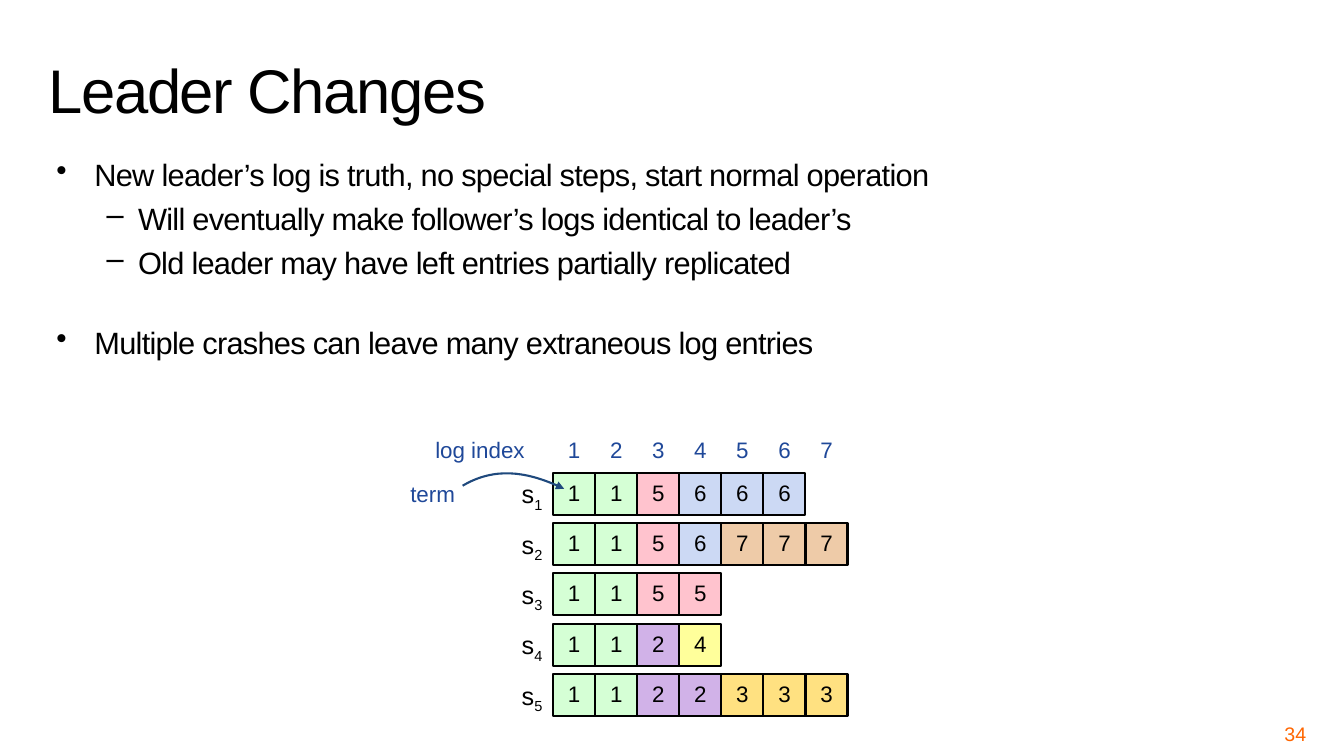
from lxml import etree
from pptx import Presentation
from pptx import util as u
from pptx.dml import color
from pptx.enum import shapes, text
from pptx.oxml import ns

FONT = "Arial"
BLACK, BLUE, ORANGE = "000000", "1F4899", "FF6600"
CURVE_COLOR = "1F497D"
TERM_COLORS = {1: "D5FFD5", 2: "D1B2E8", 3: "FFE181", 4: "FFFF9B",
               5: "FFC3CE", 6: "CCD9F4", 7: "EECBA8"}

# Terms stored in the log of each server
LOGS = [
    [1, 1, 5, 6, 6, 6],
    [1, 1, 5, 6, 7, 7, 7],
    [1, 1, 5, 5],
    [1, 1, 2, 4],
    [1, 1, 2, 2, 3, 3, 3],
]

# Level, space before in points, wording
BULLETS = [
    (0, 6, "New leader’s log is truth, no special steps, start normal operation"),
    (1, 4.4, "Will eventually make follower’s logs identical to leader’s"),
    (1, 4.4, "Old leader may have left entries partially replicated"),
    (0, 30, "Multiple crashes can leave many extraneous log entries"),
]
# Bullet sign, left margin and hanging indent of each level
LEVELS = [("•", 0.96, -0.96), ("–", 2.06, -0.79)]

# Log grid, in centimetres
GRID_LEFT, GRID_TOP = 13.94, 11.91
CELL, ROW_PITCH = 1.06, 1.27


def rgb(value):
    return color.RGBColor.from_string(value)


def apply(target, values):
    for name, value in values.items():
        setattr(target, name, value)


def set_margins(frame, horizontal, vertical):
    apply(frame, {
        "margin_left": u.Cm(horizontal), "margin_right": u.Cm(horizontal),
        "margin_top": u.Cm(vertical), "margin_bottom": u.Cm(vertical),
    })


def add_span(para, wording, size, ink, **run_format):
    """Add a run; run_format holds extra attributes such as spc or baseline."""
    span = para.add_run()
    span.text = wording
    apply(span.font, {"name": FONT, "size": u.Pt(size)})
    span.font.color.rgb = rgb(ink)
    for name, value in run_format.items():
        span.font._element.set(name, str(value))
    return span


def add_box(page, left, top, width, height, margins=(0, 0), **frame_format):
    box = page.shapes.add_textbox(*map(u.Cm, (left, top, width, height)))
    apply(box.text_frame, {"word_wrap": True, **frame_format})
    set_margins(box.text_frame, *margins)
    return box.text_frame


def add_label(page, place, wording, size=16, ink=BLUE, align=text.PP_ALIGN.LEFT,
              **box_format):
    para = add_box(page, *place, **box_format).paragraphs[0]
    para.alignment = align
    add_span(para, wording, size, ink)
    return para


def add_title(page, wording):
    frame = add_box(page, 0.97, 0.33, 32.05, 2.97, margins=(0.25, 0.13),
                    vertical_anchor=text.MSO_ANCHOR.BOTTOM)
    para = frame.paragraphs[0]
    para.line_spacing = 0.8
    add_span(para, wording, 44, BLACK, spc=-100)


def add_bullets(page):
    frame = add_box(page, 1.32, 4.01, 28.22, 13.64, margins=(0.1, 0.1))
    for number, (level, before, wording) in enumerate(BULLETS):
        para = frame.add_paragraph() if number else frame.paragraphs[0]
        apply(para, {"level": level, "line_spacing": 0.8,
                     "space_before": u.Pt(before), "space_after": u.Pt(6)})
        sign, margin, indent = LEVELS[level]
        properties = para._p.get_or_add_pPr()
        properties.set("marL", str(u.Cm(margin)))
        properties.set("indent", str(u.Cm(indent)))
        etree.SubElement(properties, ns.qn("a:buChar")).set("char", sign)
        add_span(para, wording, 22, BLACK, spc=-50)


def add_entry(page, left, top, term):
    cell = page.shapes.add_shape(shapes.MSO_SHAPE.RECTANGLE,
                                 *map(u.Cm, (left, top, CELL, CELL)))
    cell.shadow.inherit = False
    cell.fill.solid()
    cell.fill.fore_color.rgb = rgb(TERM_COLORS[term])
    cell.line.color.rgb = rgb(BLACK)
    cell.line.width = u.Pt(1.5)
    cell.text_frame.vertical_anchor = text.MSO_ANCHOR.MIDDLE
    set_margins(cell.text_frame, 0, 0)
    para = cell.text_frame.paragraphs[0]
    apply(para, {"alignment": text.PP_ALIGN.CENTER, "line_spacing": u.Pt(17)})
    add_span(para, str(term), 16, BLACK)


def add_curved_arrow(page, points):
    """Draw one cubic curve through a start, two control points and an end."""
    start, *others = [(u.Cm(x), u.Cm(y)) for x, y in points]
    builder = page.shapes.build_freeform(*start)
    builder.add_line_segments(others, close=False)
    arrow = builder.convert_to_shape()
    arrow.shadow.inherit = False
    arrow.fill.background()
    arrow.line.color.rgb = rgb(CURVE_COLOR)
    arrow.line.width = u.Pt(1.5)

    # Merge the three segments into a Bézier curve
    outline = next(arrow._element.iter(ns.qn("a:path")))
    segments = outline.findall(ns.qn("a:lnTo"))
    curve = etree.SubElement(outline, ns.qn("a:cubicBezTo"))
    for segment in segments:
        curve.append(segment[0])
        outline.remove(segment)

    line = arrow._element.spPr.find(ns.qn("a:ln"))
    etree.SubElement(line, ns.qn("a:tailEnd")).set("type", "triangle")


def add_logs(page):
    center = text.PP_ALIGN.CENTER
    # Index numbers above the columns
    for column in range(max(map(len, LOGS))):
        add_label(page, (GRID_LEFT + column * CELL, 10.87, CELL, 0.94),
                  str(column + 1), align=center, margins=(0, 0.13))
    add_label(page, (10.97, 11, 3.18, 0.69), "log index")
    add_label(page, (10.34, 12.09, 2.11, 0.69), "term")

    # One row of entries for each server
    for row, terms in enumerate(LOGS):
        top = GRID_TOP + row * ROW_PITCH
        name = add_label(page, (GRID_LEFT - CELL, top + 0.15, CELL, 0.76),
                         "s", 18, BLACK, center)
        add_span(name, str(row + 1), 18, BLACK, baseline=-25000)
        for column, term in enumerate(terms):
            add_entry(page, GRID_LEFT + column * CELL, top, term)

    # Arrow from "term" to the first entry
    add_curved_arrow(page, [(11.66, 12.24), (12.47, 11.76),
                            (13.39, 11.91), (14.22, 12.32)])


def main():
    deck = Presentation()
    apply(deck, {"slide_width": u.Cm(33.87), "slide_height": u.Cm(19.05)})
    page = deck.slides.add_slide(deck.slide_layouts[6])

    add_title(page, "Leader Changes")
    add_bullets(page)
    add_logs(page)
    # Page number
    add_label(page, (25.12, 18.21, 7.9, 0.58), "34", 14, ORANGE,
              text.PP_ALIGN.RIGHT, margins=(0.1, 0.1),
              vertical_anchor=text.MSO_ANCHOR.MIDDLE)

    deck.save("out.pptx")


if __name__ == "__main__":
    main()
